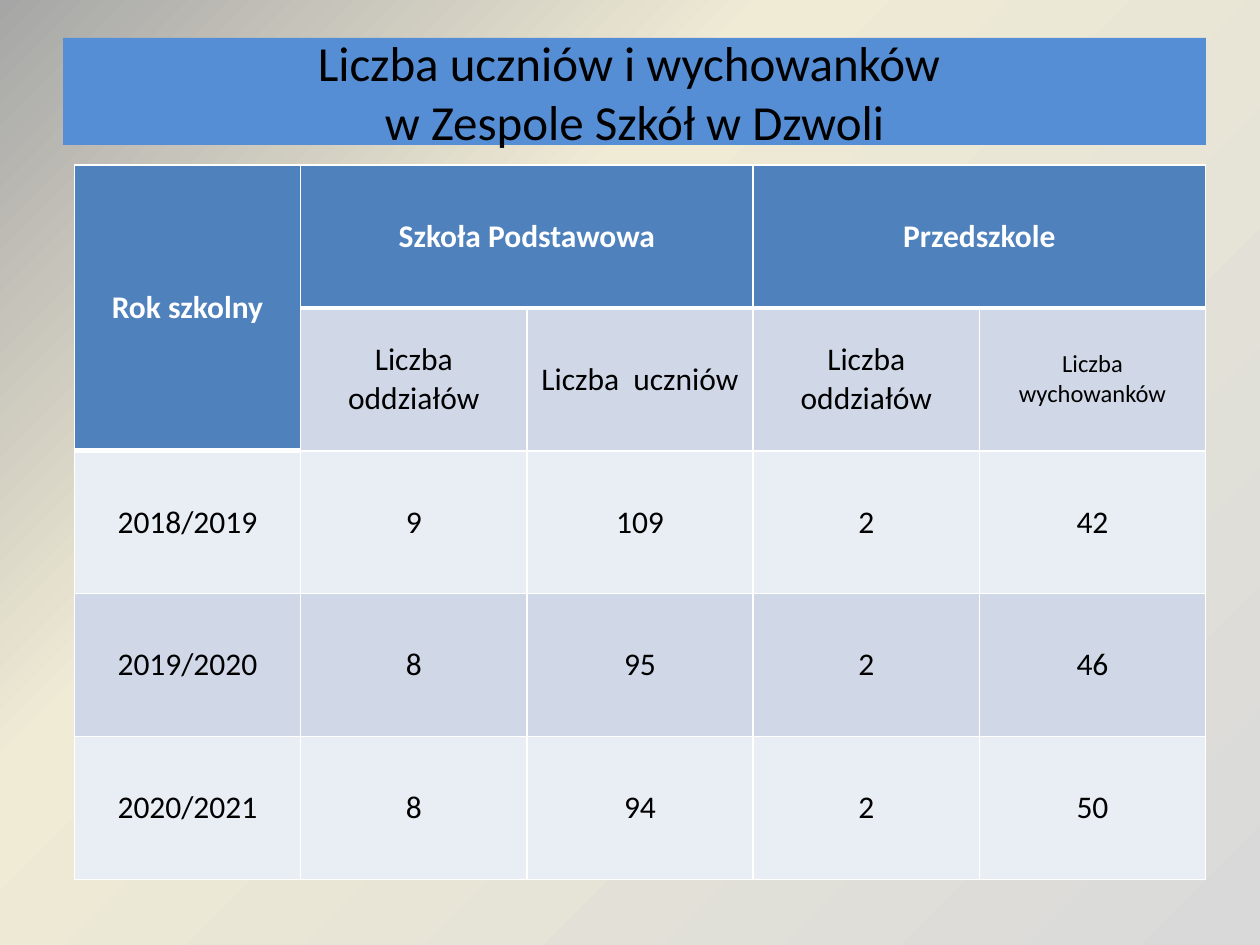
"""Builds a slide with a table of pupil and preschooler numbers by school year."""
from pptx import Presentation
from pptx import util as u
from pptx.dml.color import RGBColor
from pptx.enum import text
from pptx.oxml import parse_xml
from pptx.oxml.ns import nsdecls, qn

BLACK = RGBColor(0x00, 0x00, 0x00)
WHITE = RGBColor(0xFF, 0xFF, 0xFF)
BANNER = RGBColor(0x55, 0x8E, 0xD5)
HEADER = RGBColor(0x4F, 0x81, 0xBD)
BAND_DARK = RGBColor(0xD0, 0xD8, 0xE8)
BAND_LIGHT = RGBColor(0xE9, 0xED, 0xF4)
GLOW = [(0, RGBColor(0xD9, 0xD9, 0xD9)), (65, RGBColor(0xF0, 0xEB, 0xD5)),
        (100, RGBColor(0xA6, 0xA6, 0xA6))]
FONT = "Calibri"


def add_run(paragraph, words, size, color, bold=False):
    run = paragraph.add_run()
    run.text = words
    run.font.name = FONT
    run.font.size = u.Pt(size)
    run.font.bold = bold
    run.font.color.rgb = color


def add_borders(cell, widths):
    properties = cell._tc.get_or_add_tcPr()
    for position, (side, width) in enumerate(widths.items()):
        properties.insert(position, parse_xml(
            f'<a:{side} {nsdecls("a")} w="{u.Pt(width)}"><a:solidFill>'
            f'<a:srgbClr val="{WHITE}"/></a:solidFill></a:{side}>'))


deck = Presentation()
deck.slide_width, deck.slide_height = u.Inches(10), u.Inches(7.5)
slide = deck.slides.add_slide(deck.slide_layouts[5])

slide.background.fill.gradient()
stops = "".join(f'<a:gs pos="{place * 1000}"><a:srgbClr val="{color}"/></a:gs>'
                for place, color in GLOW)
backdrop = slide.element.find(".//" + qn("a:gradFill"))
backdrop.getparent().replace(backdrop, parse_xml(
    f'<a:gradFill {nsdecls("a")} rotWithShape="1"><a:gsLst>{stops}</a:gsLst>'
    '<a:path path="circle"><a:fillToRect l="100000" t="100000"/></a:path></a:gradFill>'))

title = slide.shapes.title
title.left, title.top = u.Inches(0.5), u.Inches(0.3)
title.width, title.height = u.Inches(9.07), u.Inches(0.85)
title.fill.solid()
title.fill.fore_color.rgb = BANNER
title.text_frame.auto_size = text.MSO_AUTO_SIZE.NONE
title.text_frame.vertical_anchor = text.MSO_ANCHOR.MIDDLE
heading = title.text_frame.paragraphs[0]
heading.alignment = text.PP_ALIGN.CENTER
add_run(heading, "Liczba uczniów i wychowanków ", 28, BLACK)
heading.add_line_break()
add_run(heading, "w Zespole Szkół w Dzwoli", 28, BLACK)

rows = [
    ["Rok szkolny", "Szkoła Podstawowa", "", "Przedszkole", ""],
    ["", "Liczba oddziałów", "Liczba  uczniów", "Liczba oddziałów", "Liczba wychowanków"],
    ["2018/2019", "9", "109", "2", "42"],
    ["2019/2020", "8", "95", "2", "46"],
    ["2020/2021", "8", "94", "2", "50"],
]
enrolment = slide.shapes.add_table(5, 5, u.Inches(0.59), u.Inches(1.31),
                                   u.Inches(8.98), u.Inches(5.67)).table
for first, last in [((0, 0), (1, 0)), ((0, 1), (0, 2)), ((0, 3), (0, 4))]:
    enrolment.cell(*first).merge(enrolment.cell(*last))

for r, row in enumerate(rows):
    for c, words in enumerate(row):
        cell = enrolment.cell(r, c)
        header_end = 1 if c == 0 else 0
        is_header = r <= header_end
        cell.fill.solid()
        cell.fill.fore_color.rgb = HEADER if is_header else BAND_DARK if r % 2 else BAND_LIGHT
        cell.vertical_anchor = text.MSO_ANCHOR.MIDDLE
        add_borders(cell, {"lnL": 1, "lnR": 1,
                           "lnT": 3 if r == header_end + 1 else 1,
                           "lnB": 3 if r == header_end or (r, c) == (0, 0) else 1})
        if words:
            paragraph = cell.text_frame.paragraphs[0]
            paragraph.alignment = text.PP_ALIGN.CENTER
            add_run(paragraph, words, 14 if words == "Liczba wychowanków" else 18,
                    WHITE if is_header else BLACK, is_header)

deck.save("out.pptx")
